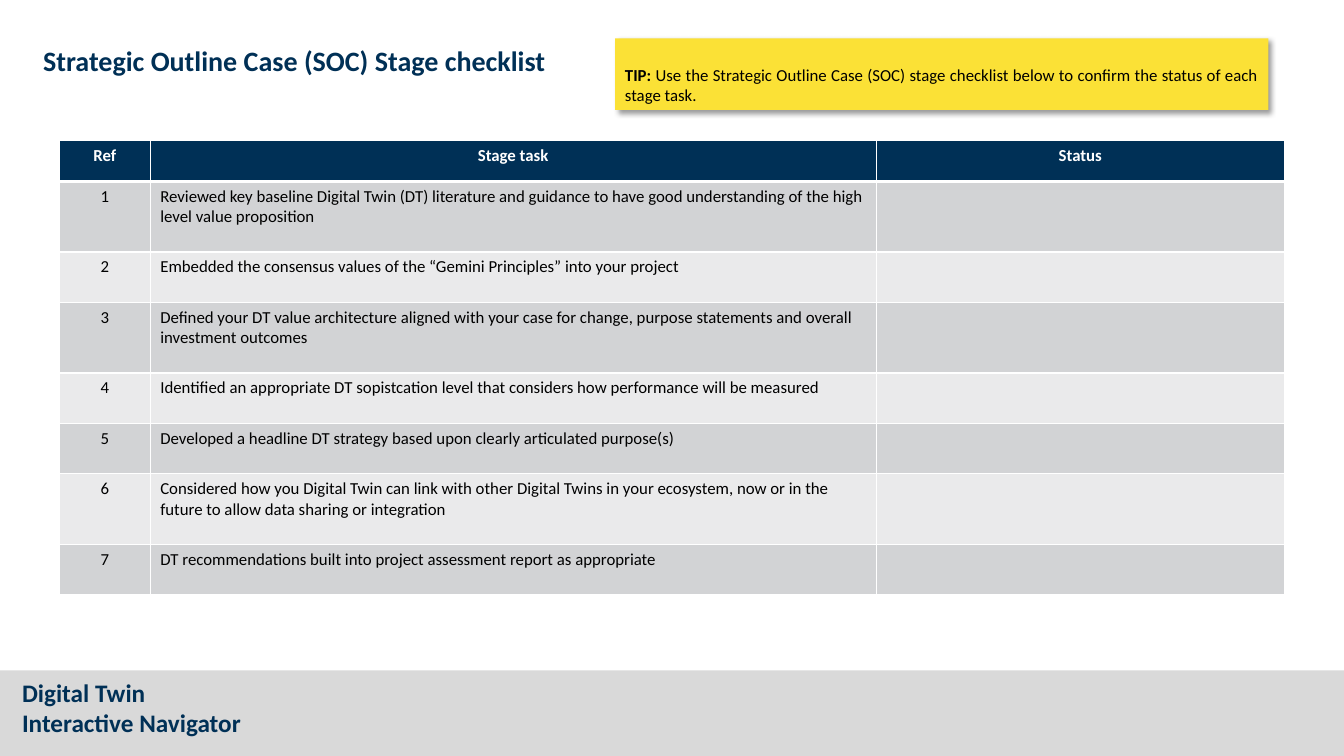
from lxml import etree
from pptx import Presentation
from pptx.dml.color import RGBColor
from pptx.enum.shapes import MSO_SHAPE
from pptx.enum.text import MSO_ANCHOR, PP_ALIGN
from pptx.oxml import parse_xml
from pptx.util import Inches, Pt

RECTANGLE = MSO_SHAPE.RECTANGLE
TOP, BOTTOM = MSO_ANCHOR.TOP, MSO_ANCHOR.BOTTOM
LEFT, CENTER, JUSTIFY = PP_ALIGN.LEFT, PP_ALIGN.CENTER, PP_ALIGN.JUSTIFY

FONT = "Calibri"
DRAWING_NS = "http://schemas.openxmlformats.org/drawingml/2006/main"
COLORS = {
    "navy": "003056", "white": "FFFFFF", "black": "000000", "yellow": "FBE136",
    "footer": "D9D9D9", "odd": "D2D3D5", "even": "EAEAEB",
}

TITLE = "Strategic Outline Case (SOC) Stage checklist"
TIP = [
    ("TIP: ", True),
    ("Use the Strategic Outline Case (SOC) stage checklist below to confirm "
     "the status of each stage task.", False),
]
FOOTER = ["Digital Twin", "Interactive Navigator"]
HEADINGS = ["Ref", "Stage task", "Status"]
# Each task with its row height
TASKS = [
    ("Reviewed key baseline Digital Twin (DT) literature and guidance to have good "
     "understanding of the high level value proposition", 0.7),
    ("Embedded the consensus values of the “Gemini Principles” into your project", 0.5),
    ("Defined your DT value architecture aligned with your case for change, purpose "
     "statements and overall investment outcomes", 0.7),
    ("Identified an appropriate DT sopistcation level that considers how performance "
     "will be measured", 0.5),
    ("Developed a headline DT strategy based upon clearly articulated purpose(s)", 0.5),
    ("Considered how you Digital Twin can link with other Digital Twins in your "
     "ecosystem, now or in the future to allow data sharing or integration", 0.7),
    ("DT recommendations built into project assessment report as appropriate", 0.5),
]
COLUMN_WIDTHS = [0.9, 7.2, 4.05]
HEADER_HEIGHT = 0.41


def rgb(name):
    return RGBColor.from_string(COLORS[name])


def add_run(paragraph, text, size, color, bold):
    run = paragraph.add_run()
    run.text = text
    run.font.name = FONT
    run.font.size = Pt(size)
    run.font.bold = bold
    run.font.color.rgb = rgb(color)


def add_box(slide, box, fill):
    rectangle = slide.shapes.add_shape(RECTANGLE, *map(Inches, box))
    rectangle.shadow.inherit = False
    rectangle.fill.solid()
    rectangle.fill.fore_color.rgb = rgb(fill)
    rectangle.line.fill.background()
    return rectangle


def add_heading(slide, box, lines, size):
    frame = slide.shapes.add_textbox(*map(Inches, box)).text_frame
    frame.word_wrap = True
    for index, line in enumerate(lines):
        paragraph = frame.add_paragraph() if index else frame.paragraphs[0]
        add_run(paragraph, line, size, "navy", True)


def add_shadow(shape):
    effects = shape._element.spPr.find(f"{{{DRAWING_NS}}}effectLst")
    effects.append(parse_xml(
        f'<a:outerShdw xmlns:a="{DRAWING_NS}" blurRad="{Pt(4)}" dist="{Pt(3)}" '
        f'dir="2700000" algn="tl" rotWithShape="0"><a:srgbClr val="{COLORS["black"]}">'
        '<a:alpha val="40000"/></a:srgbClr></a:outerShdw>'))


def set_borders(cell, top, bottom):
    """Draw white borders, 1 pt at the sides and the given points above and below."""
    properties = cell._tc.get_or_add_tcPr()
    for side, width in (("L", 1), ("R", 1), ("T", top), ("B", bottom)):
        line = etree.SubElement(properties, f"{{{DRAWING_NS}}}ln{side}", w=str(Pt(width)))
        fill = etree.SubElement(line, f"{{{DRAWING_NS}}}solidFill")
        etree.SubElement(fill, f"{{{DRAWING_NS}}}srgbClr", val=COLORS["white"])


def add_checklist(slide):
    rows = [HEADINGS] + [[str(ref), task, ""] for ref, (task, _) in enumerate(TASKS, 1)]
    heights = [HEADER_HEIGHT] + [height for _, height in TASKS]
    table = slide.shapes.add_table(
        len(rows), len(HEADINGS), Inches(0.59), Inches(1.39),
        Inches(sum(COLUMN_WIDTHS)), Inches(sum(heights))).table
    for column, width in zip(table.columns, COLUMN_WIDTHS):
        column.width = Inches(width)
    for r, (texts, height) in enumerate(zip(rows, heights)):
        table.rows[r].height = Inches(height)
        header = r == 0
        fill = "navy" if header else "odd" if r % 2 else "even"
        for c, text in enumerate(texts):
            cell = table.cell(r, c)
            set_borders(cell, 3 if r == 1 else 1, 3 if header else 1)
            cell.fill.solid()
            cell.fill.fore_color.rgb = rgb(fill)
            cell.vertical_anchor = TOP
            paragraph = cell.text_frame.paragraphs[0]
            paragraph.alignment = CENTER if header or c == 0 else LEFT
            if text:
                add_run(paragraph, text, 12, "white" if header else "black", header)


def add_tip(slide):
    tip = add_box(slide, (6.1, 0.38, 6.48, 0.71), "yellow")
    add_shadow(tip)
    frame = tip.text_frame
    frame.word_wrap = True
    frame.vertical_anchor = BOTTOM
    frame.paragraphs[0].alignment = JUSTIFY
    for text, bold in TIP:
        add_run(frame.paragraphs[0], text, 12, "black", bold)


def main():
    presentation = Presentation()
    presentation.slide_width = Inches(13.33)
    presentation.slide_height = Inches(7.5)
    slide = presentation.slides.add_slide(presentation.slide_layouts[6])
    add_box(slide, (0, 6.65, 13.33, 0.85), "footer")
    add_heading(slide, (0.12, 6.67, 4.05, 0.71), FOOTER, 18)
    add_checklist(slide)
    add_heading(slide, (0.33, 0.38, 5.87, 0.44), [TITLE], 20)
    add_tip(slide)
    presentation.save("out.pptx")


if __name__ == "__main__":
    main()
